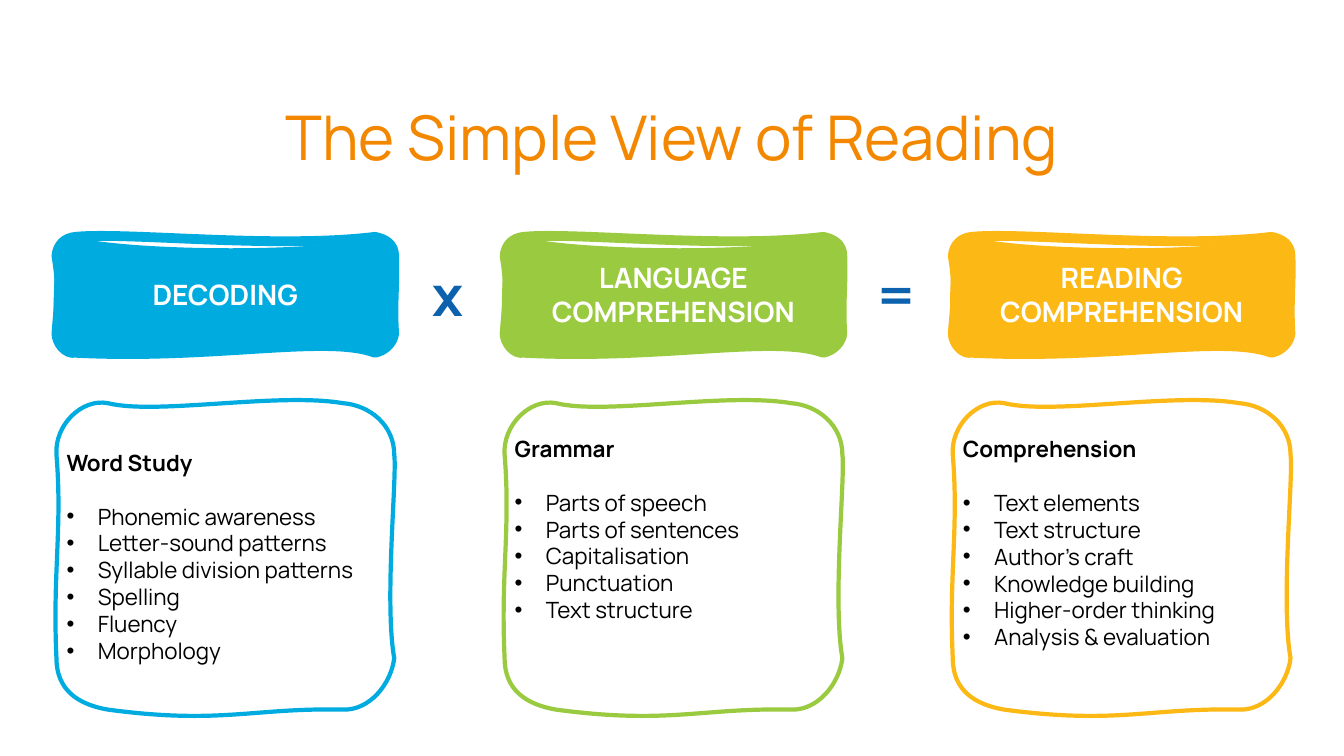
from lxml import etree
from pptx import Presentation
from pptx.dml.color import RGBColor
from pptx.enum.text import MSO_ANCHOR, MSO_AUTO_SIZE, PP_ALIGN
from pptx.oxml.ns import qn
from pptx.util import Inches, Pt

LEFT, CENTER = PP_ALIGN.LEFT, PP_ALIGN.CENTER
TOP, MIDDLE = MSO_ANCHOR.TOP, MSO_ANCHOR.MIDDLE
NO_FIT = MSO_AUTO_SIZE.NONE

BLUE = RGBColor(0x00, 0xAB, 0xE0)
GREEN = RGBColor(0x9A, 0xCA, 0x3F)
YELLOW = RGBColor(0xFC, 0xB8, 0x14)
ORANGE = RGBColor(0xF3, 0x88, 0x00)
NAVY = RGBColor(0x0D, 0x62, 0xAE)
WHITE = RGBColor(0xFF, 0xFF, 0xFF)
BLACK = RGBColor(0x00, 0x00, 0x00)

FONT = "Manrope"
FIRST_LEFT = 0.56
PITCH = (9.45 - FIRST_LEFT) / 2
WIDTH = 3.35
BANNER_TOP, BANNER_HEIGHT = 2.35, 1.14
CARD_TOP, CARD_HEIGHT = 4.0, 3.04
CARD_LINE = 0.27  # height of one line of card text

# Hand-drawn outlines in inches from the box corner:
# a start point, then three points (two handles and an end) for each curve
BANNER_EDGE = [
    (0, 0.19),
    (0.01, 0.08), (0.08, 0.01), (0.19, 0), (0.68, -0.05), (2.18, 0.12), (3.16, 0),
    (3.26, 0.02), (3.35, 0.07), (3.35, 0.19), (3.36, 0.49), (3.33, 0.65), (3.35, 0.96),
    (3.34, 1.05), (3.26, 1.13), (3.16, 1.15), (2.68, 0.97), (1.56, 1.22), (0.19, 1.15),
    (0.09, 1.17), (0, 1.05), (0, 0.96), (0.03, 0.59), (0.05, 0.48), (0, 0.19)]
BANNER_BODY = [
    (0, 0.19),
    (-0.01, 0.08), (0.08, 0), (0.19, 0), (0.64, 0.13), (2.54, 0.17), (3.16, 0),
    (3.26, 0.01), (3.34, 0.08), (3.35, 0.19), (3.34, 0.52), (3.33, 0.65), (3.35, 0.96),
    (3.35, 1.07), (3.25, 1.15), (3.16, 1.15), (2.05, 1.06), (0.7, 1.25), (0.19, 1.15),
    (0.1, 1.16), (0, 1.06), (0, 0.96), (-0.05, 0.86), (-0.02, 0.35), (0, 0.19)]
CARD_EDGE = [
    (0, 0.51),
    (-0.02, 0.22), (0.25, -0.05), (0.51, 0), (0.99, 0.12), (2.19, -0.11), (2.84, 0),
    (3.11, 0.02), (3.35, 0.22), (3.35, 0.51), (3.38, 0.72), (3.25, 1.96), (3.35, 2.53),
    (3.32, 2.78), (3.11, 3.05), (2.84, 3.04), (1.95, 3.02), (1.63, 3.19), (0.51, 3.04),
    (0.22, 2.99), (0, 2.85), (0, 2.53), (-0.04, 1.68), (0.06, 1.25), (0, 0.51)]

# Banner lines, card heading, card bullets, free lines kept below the bullets
COLUMNS = [
    (BLUE, ["DECODING"], "Word Study",
     ["Phonemic awareness", "Letter-sound patterns", "Syllable division patterns",
      "Spelling", "Fluency", "Morphology"], 0),
    (GREEN, ["LANGUAGE COMPREHENSION"], "Grammar",
     ["Parts of speech", "Parts of sentences", "Capitalisation", "Punctuation",
      "Text structure"], 2),
    (YELLOW, ["READING", "COMPREHENSION"], "Comprehension",
     ["Text elements", "Text structure", "Author’s craft", "Knowledge building",
      "Higher-order thinking", "Analysis & evaluation"], 1),
]
OPERATORS = ["x", "="]


def write(para, text, size, color, bold=False, align=LEFT, bullet=False, after=0):
    para.alignment = align
    para.space_after = Pt(after)
    if bullet:
        props = para._p.get_or_add_pPr()
        props.set("marL", str(Inches(0.31)))
        props.set("indent", str(-Inches(0.31)))
        etree.SubElement(props, qn("a:buFont")).set("typeface", "Arial")
        etree.SubElement(props, qn("a:buChar")).set("char", "•")
    span = para.add_run()
    span.text = text
    span.font.name = FONT
    span.font.size = Pt(size)
    span.font.bold = bold
    span.font.color.rgb = color


def next_para(frame, index):
    return frame.paragraphs[0] if index == 0 else frame.add_paragraph()


def add_outline(page, points, left, top, fill=None, line=None, line_width=0):
    """Draw a closed freeform, then turn each three segments into one curve."""
    corners = [(Inches(left + x), Inches(top + y)) for x, y in points]
    builder = page.shapes.build_freeform(*corners[0])
    builder.add_line_segments(corners[1:], close=True)
    shape = builder.convert_to_shape()
    segments = list(shape._element.iter(qn("a:lnTo")))
    for first in range(0, len(segments), 3):
        curve = etree.Element(qn("a:cubicBezTo"))
        segments[first].addprevious(curve)
        for segment in segments[first:first + 3]:
            curve.append(segment[0])
            segment.getparent().remove(segment)
    shape.shadow.inherit = False
    if fill is None:
        shape.fill.background()
    else:
        shape.fill.solid()
        shape.fill.fore_color.rgb = fill
    if line is None:
        shape.line.fill.background()
    else:
        shape.line.color.rgb = line
        shape.line.width = Pt(line_width)
    return shape


def text_frame_in_box(shape, left, top, width, height, spare=0):
    """Set insets from the nominal box, which the wavy outline overshoots."""
    frame = shape.text_frame
    frame.word_wrap = True
    frame.vertical_anchor = MIDDLE
    frame.margin_left = Inches(left + 0.1) - shape.left
    frame.margin_top = Inches(top + 0.05) - shape.top
    frame.margin_right = shape.left + shape.width - Inches(left + width - 0.1)
    frame.margin_bottom = shape.top + shape.height - Inches(top + height - 0.05 - spare)
    return frame


def add_title(page, text, left, top, width, height):
    title = page.shapes.title
    title.left, title.top = Inches(left), Inches(top)
    title.width, title.height = Inches(width), Inches(height)
    frame = title.text_frame
    frame.auto_size = NO_FIT
    frame.vertical_anchor = MIDDLE
    para = frame.paragraphs[0]
    para.line_spacing = 0.9
    write(para, text, 44, ORANGE, align=CENTER)


def add_banner(page, lines, color, left, top, width, height):
    add_outline(page, BANNER_BODY, left, top, fill=color)
    edge = add_outline(page, BANNER_EDGE, left, top, line=color, line_width=7)
    frame = text_frame_in_box(edge, left, top, width, height)
    for index, text in enumerate(lines):
        write(next_para(frame, index), text, 20, WHITE, bold=True, align=CENTER)


def add_card(page, heading, bullets, spare_lines, color, left, top, width, height):
    card = add_outline(page, CARD_EDGE, left, top, line=color, line_width=3)
    frame = text_frame_in_box(card, left, top, width, height, spare_lines * CARD_LINE)
    write(frame.paragraphs[0], heading, 16, BLACK, bold=True, after=19.2)
    for text in bullets:
        write(frame.add_paragraph(), text, 16, BLACK, bullet=True)


def add_operator(page, symbol, left, top, width, height):
    box = page.shapes.add_textbox(Inches(left), Inches(top), Inches(width), Inches(height))
    frame = box.text_frame
    frame.word_wrap = True
    frame.vertical_anchor = TOP
    write(frame.paragraphs[0], symbol, 40, NAVY, bold=True, align=CENTER)


def main():
    deck = Presentation()
    deck.slide_width, deck.slide_height = Inches(13.33), Inches(7.5)
    page = deck.slides.add_slide(deck.slide_layouts[5])
    add_title(page, "The Simple View of Reading", 0.92, 0.93, 11.5, 0.92)

    # Columns: a banner above a card
    for index, (color, lines, heading, bullets, spare_lines) in enumerate(COLUMNS):
        left = FIRST_LEFT + index * PITCH
        add_banner(page, lines, color, left, BANNER_TOP, WIDTH, BANNER_HEIGHT)
        add_card(page, heading, bullets, spare_lines, color,
                 left, CARD_TOP, WIDTH, CARD_HEIGHT)

    # Operators between the banners
    for index, symbol in enumerate(OPERATORS):
        add_operator(page, symbol, 4.12 + index * PITCH, 2.54, 0.65, 0.77)

    deck.save("out.pptx")


if __name__ == "__main__":
    main()
